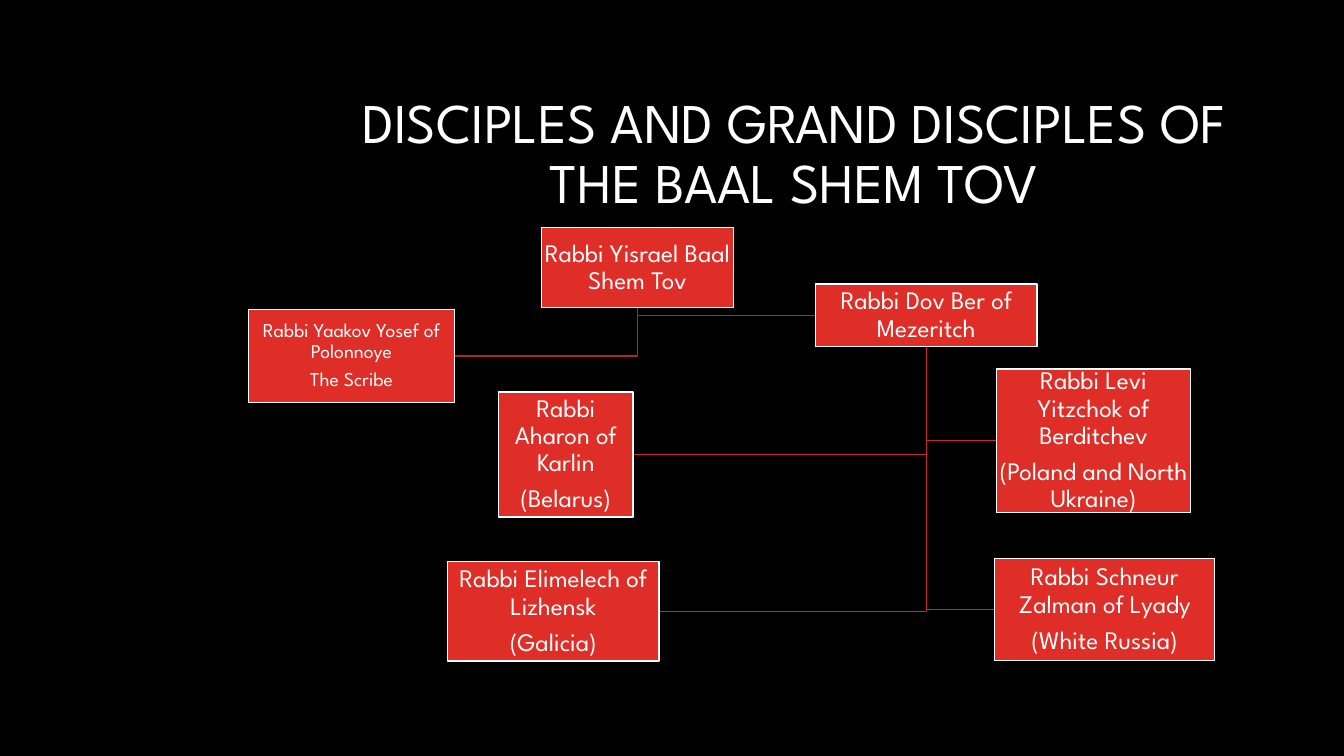
from pptx import Presentation
from pptx.dml.color import RGBColor
from pptx.enum.shapes import MSO_SHAPE
from pptx.enum.text import MSO_ANCHOR, PP_ALIGN
from pptx.util import Cm, Pt

COLOURS = {
    "background": "000000",
    "text": "FFFFFF",
    "box": "DF2E28",
    "first_link": "B32520",
    "second_link": "CA2A24",
}
FONT = "League Spartan"
TITLE = "DISCIPLES AND GRAND DISCIPLES OF THE BAAL SHEM TOV"

RABBIS = {
    "baal_shem_tov": (13.64, 5.74, 4.85, 2.01, 18, ["Rabbi Yisrael Baal Shem Tov"]),
    "yaakov_yosef": (6.27, 7.8, 5.18, 2.34, 14, ["Rabbi Yaakov Yosef of Polonnoye", "The Scribe"]),
    "dov_ber": (20.55, 7.16, 5.59, 1.57, 18, ["Rabbi Dov Ber of Mezeritch"]),
    "aharon": (12.57, 9.88, 3.38, 3.15, 18, ["Rabbi Aharon of Karlin", "(Belarus)"]),
    "levi_yitzchok": (25.12, 9.3, 4.88, 3.61, 18,
                      ["Rabbi Levi Yitzchok of Berditchev", "(Poland and North Ukraine)"]),
    "elimelech": (11.28, 14.15, 5.33, 2.51, 18, ["Rabbi Elimelech of Lizhensk", "(Galicia)"]),
    "schneur_zalman": (25.07, 14.07, 5.54, 2.57, 18,
                       ["Rabbi Schneur Zalman of Lyady", "(White Russia)"]),
}
LINKS = [
    ("dov_ber", "schneur_zalman", "second_link"),
    ("dov_ber", "elimelech", "second_link"),
    ("dov_ber", "levi_yitzchok", "second_link"),
    ("dov_ber", "aharon", "second_link"),
    ("baal_shem_tov", "dov_ber", "first_link"),
    ("baal_shem_tov", "yaakov_yosef", "first_link"),
]


def colour(name):
    return RGBColor.from_string(COLOURS[name])


def write_text(box, lines, size, inset, space_after):
    frame = box.text_frame
    frame.word_wrap = True
    frame.vertical_anchor = MSO_ANCHOR.MIDDLE
    frame.margin_left = frame.margin_right = Cm(inset)
    frame.margin_top = frame.margin_bottom = Cm(inset)
    frame.text = "\n".join(lines)
    for para in frame.paragraphs:
        para.alignment = PP_ALIGN.CENTER
        para.line_spacing = 0.9
        para.space_after = Pt(space_after)
        for span in para.runs:
            span.font.name = FONT
            span.font.size = Pt(size)
            span.font.color.rgb = colour("text")


def add_title(page):
    box = page.shapes.add_textbox(Cm(8.05), Cm(2.13), Cm(23.93), Cm(3.58))
    write_text(box, [TITLE], 40, 0.2, 0)


def add_link(page, parent, child, line_colour):
    left, top, width, height = RABBIS[parent][:4]
    child_left, child_top, child_width, child_height = RABBIS[child][:4]
    start_x = left + width / 2
    end_x = child_left if child_left > start_x else child_left + child_width
    end_y = child_top + child_height / 2
    builder = page.shapes.build_freeform(Cm(start_x), Cm(top + height))
    corners = [(Cm(start_x), Cm(end_y)), (Cm(end_x), Cm(end_y))]
    builder.add_line_segments(corners, close=False)
    link = builder.convert_to_shape()
    link.shadow.inherit = False
    link.fill.background()
    link.line.color.rgb = colour(line_colour)
    link.line.width = Pt(1)


def add_rabbi(page, left, top, width, height, size, lines):
    box = page.shapes.add_shape(
        MSO_SHAPE.RECTANGLE, Cm(left), Cm(top), Cm(width), Cm(height))
    box.shadow.inherit = False
    box.fill.solid()
    box.fill.fore_color.rgb = colour("box")
    box.line.color.rgb = colour("text")
    box.line.width = Pt(1)
    write_text(box, lines, size, 0.03, round(size * 0.35, 1))


def main():
    deck = Presentation()
    deck.slide_width = Cm(33.87)
    deck.slide_height = Cm(19.05)
    page = deck.slides.add_slide(deck.slide_layouts[6])
    page.background.fill.solid()
    page.background.fill.fore_color.rgb = colour("background")
    add_title(page)
    for parent, child, line_colour in LINKS:
        add_link(page, parent, child, line_colour)
    for rabbi in RABBIS.values():
        add_rabbi(page, *rabbi)
    deck.save("out.pptx")


if __name__ == "__main__":
    main()
